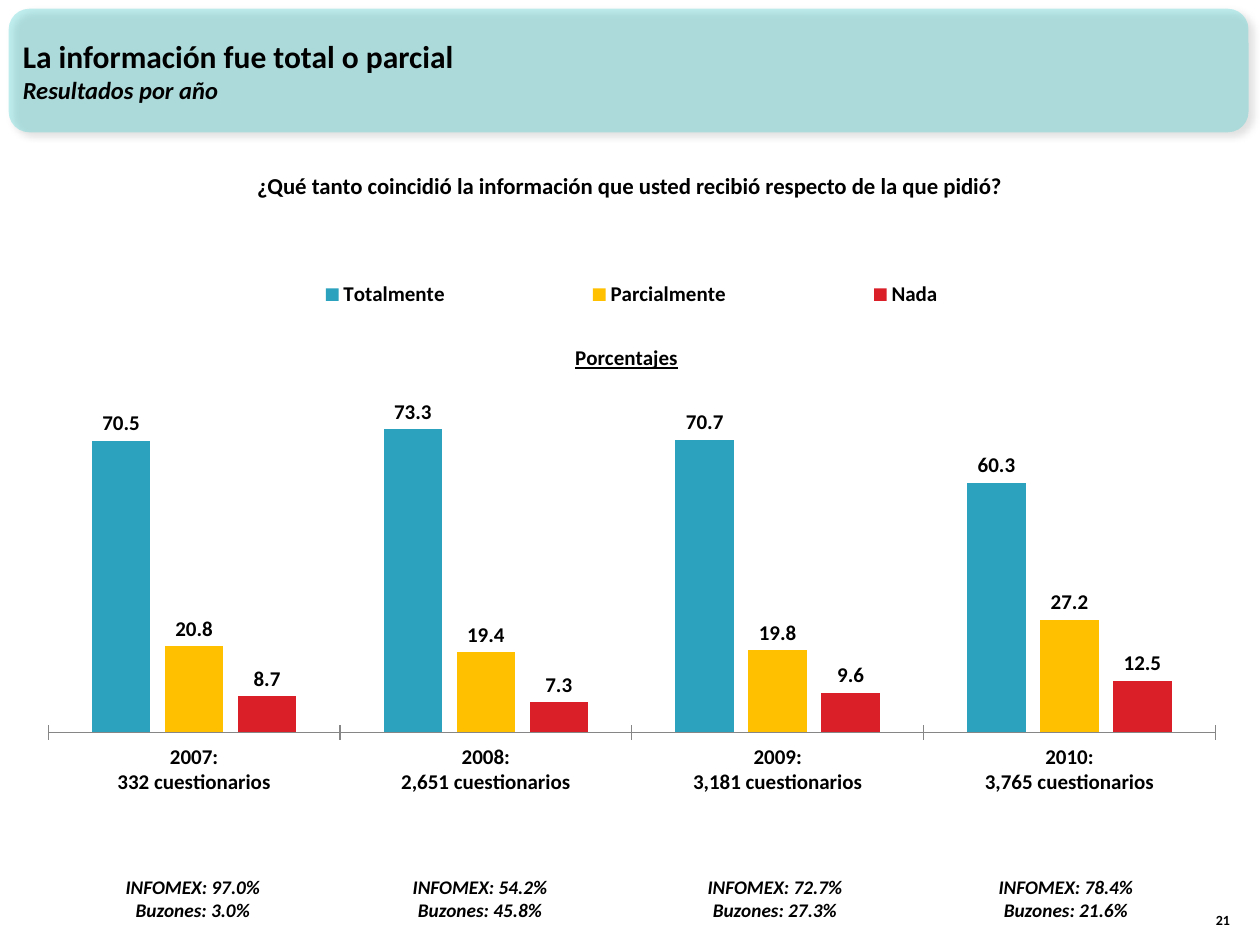
from dataclasses import dataclass
from typing import NamedTuple

from lxml.etree import SubElement
from pptx import Presentation
from pptx.chart.data import CategoryChartData
from pptx.dml.color import RGBColor
from pptx.enum.chart import (
    XL_CHART_TYPE, XL_LABEL_POSITION, XL_LEGEND_POSITION, XL_TICK_LABEL_POSITION, XL_TICK_MARK,
)
from pptx.enum.shapes import MSO_SHAPE
from pptx.enum.text import MSO_ANCHOR, MSO_AUTO_SIZE, PP_ALIGN
from pptx.oxml import parse_xml
from pptx.oxml.ns import nsdecls, qn
from pptx.util import Pt

BLACK = RGBColor(0x00, 0x00, 0x00)
TURQUOISE = RGBColor(0x33, 0xCC, 0xCC)
BLUE = RGBColor(0x2D, 0xA2, 0xBF)
YELLOW = RGBColor(0xFF, 0xC0, 0x00)
RED = RGBColor(0xDA, 0x1F, 0x28)
AXIS_GRAY = RGBColor(0x86, 0x86, 0x86)
FONT = "Calibri"


class Box(NamedTuple):
    left: float
    top: float
    width: float
    height: float

    def lengths(self) -> list:
        return [Pt(value) for value in self]


@dataclass
class Line:
    text: str
    size: float
    italic: bool = False


@dataclass
class Answer:
    name: str
    percentages: tuple
    color: RGBColor


@dataclass
class Year:
    year: int
    questionnaires: str
    infomex: str
    mailboxes: str
    note_left: float


ANSWERS = [
    Answer("Totalmente", (70.5, 73.3, 70.7, 60.3), BLUE),
    Answer("Parcialmente", (20.8, 19.4, 19.8, 27.2), YELLOW),
    Answer("Nada", (8.7, 7.3, 9.6, 12.5), RED),
]
YEARS = [
    Year(2007, "332", "97.0%", "3.0%", 53.3),
    Year(2008, "2,651", "54.2%", "45.8%", 217.4),
    Year(2009, "3,181", "72.7%", "27.3%", 385.9),
    Year(2010, "3,765", "78.4%", "21.6%", 552.2),
]


def format_font(font, size: float, italic: bool = False) -> None:
    font.name = FONT
    font.size = Pt(size)
    font.bold = True
    font.italic = italic
    font.color.rgb = BLACK


def write_lines(text_frame, lines: list[Line], alignment, anchor=MSO_ANCHOR.TOP) -> None:
    text_frame.word_wrap = True
    text_frame.auto_size = MSO_AUTO_SIZE.NONE
    text_frame.vertical_anchor = anchor
    for index, line in enumerate(lines):
        paragraph = text_frame.paragraphs[0] if index == 0 else text_frame.add_paragraph()
        paragraph.alignment = alignment
        run = paragraph.add_run()
        run.text = line.text
        format_font(run.font, line.size, line.italic)


def add_text(slide, box: Box, lines: list[Line], alignment=PP_ALIGN.CENTER,
             anchor=MSO_ANCHOR.TOP) -> None:
    shape = slide.shapes.add_textbox(*box.lengths())
    write_lines(shape.text_frame, lines, alignment, anchor)


def add_banner(slide) -> None:
    """Place the translucent, shadowed banner behind the title."""
    banner = slide.shapes.add_shape(MSO_SHAPE.ROUNDED_RECTANGLE, *Box(5, 5, 708.5, 70.6).lengths())
    banner.fill.solid()
    banner.fill.fore_color.rgb = TURQUOISE
    color = banner.element.spPr.find(f"{qn('a:solidFill')}/{qn('a:srgbClr')}")
    SubElement(color, qn("a:alpha"), val="30000")
    banner.line.fill.background()
    banner.element.spPr.append(parse_xml(
        f'<a:effectLst {nsdecls("a")}><a:outerShdw blurRad="50800" dist="38100" dir="2700000" '
        'algn="tl" rotWithShape="0"><a:srgbClr val="000000"><a:alpha val="40000"/></a:srgbClr>'
        '</a:outerShdw></a:effectLst>'))
    slide.shapes.title.element.addprevious(banner.element)


def set_layout(parent, previous_tag: str, target: str = "", **fractions: float) -> None:
    """Position a chart part by fractions of the chart area."""
    for old in parent.findall(qn("c:layout")):
        parent.remove(old)
    inner = f'<c:layoutTarget val="{target}"/>' if target else ""
    modes = "".join(f'<c:{key}Mode val="edge"/>' for key in fractions if key in "xy")
    values = "".join(f'<c:{key} val="{value}"/>' for key, value in fractions.items())
    layout = parse_xml(f'<c:layout {nsdecls("c")}><c:manualLayout>{inner}{modes}{values}'
                       '</c:manualLayout></c:layout>')
    previous = parent.find(qn(previous_tag)) if previous_tag else None
    if previous is None:
        parent.insert(0, layout)
    else:
        previous.addnext(layout)


def add_answer_chart(slide) -> None:
    data = CategoryChartData(number_format="0.0")
    data.categories = [f"{year.year}:\n{year.questionnaires} cuestionarios" for year in YEARS]
    for answer in ANSWERS:
        data.add_series(answer.name, answer.percentages)
    box = Box(15.8, 149, 690.5, 323.3)
    chart = slide.shapes.add_chart(XL_CHART_TYPE.COLUMN_CLUSTERED, *box.lengths(), data).chart
    format_font(chart.font, 12)

    chart.has_title = True
    run = chart.chart_title.text_frame.paragraphs[0].add_run()
    run.text = "Porcentajes"
    format_font(run.font, 12)
    run.font.underline = True
    chart.chart_title.include_in_layout = False

    chart.has_legend = True
    chart.legend.position = XL_LEGEND_POSITION.TOP
    chart.legend.include_in_layout = False
    format_font(chart.legend.font, 12)

    category_axis = chart.category_axis
    category_axis.major_tick_mark = XL_TICK_MARK.CROSS
    category_axis.tick_label_position = XL_TICK_LABEL_POSITION.LOW
    category_axis.format.line.color.rgb = AXIS_GRAY
    value_axis = chart.value_axis
    value_axis.minimum_scale, value_axis.maximum_scale, value_axis.major_unit = 0, 80, 20
    value_axis.has_major_gridlines = False
    value_axis.visible = False

    plot = chart.plots[0]
    plot.gap_width, plot.overlap, plot.vary_by_categories = 150, -25, False
    for series, answer in zip(plot.series, ANSWERS):
        series.format.fill.solid()
        series.format.fill.fore_color.rgb = answer.color
        labels = series.data_labels
        labels.show_value = True
        labels.number_format, labels.number_format_is_linked = "0.0", False
        labels.position = XL_LABEL_POSITION.OUTSIDE_END
        format_font(labels.font, 12)

    chart_element = chart.element.find(qn("c:chart"))
    set_layout(chart_element.find(qn("c:title")), "c:tx", x=0.45, y=0.14)
    set_layout(chart_element.find(qn("c:legend")), "c:legendPos", x=0.13, y=0.02, w=0.74, h=0.08)
    set_layout(chart_element.find(qn("c:plotArea")), "", "inner", x=0.017, y=0.249, w=0.966, h=0.585)


def main() -> None:
    presentation = Presentation()
    presentation.slide_width, presentation.slide_height = Pt(720), Pt(540)
    slide = presentation.slides.add_slide(presentation.slide_layouts[5])
    title = slide.shapes.title
    title.left, title.top, title.width, title.height = Box(5.8, 6.5, 660, 67.7).lengths()
    write_lines(title.text_frame,
                [Line("La información fue total o parcial", 18), Line("Resultados por año", 14, True)],
                PP_ALIGN.LEFT, MSO_ANCHOR.MIDDLE)
    add_banner(slide)
    add_text(slide, Box(681, 504.7, 29, 29), [Line("21", 8)], PP_ALIGN.RIGHT, MSO_ANCHOR.BOTTOM)
    add_answer_chart(slide)
    question = "¿Qué tanto coincidió la información que usted recibió respecto de la que pidió?"
    add_text(slide, Box(64, 94.3, 591, 23), [Line(question, 13)])
    for year in YEARS:
        add_text(slide, Box(year.note_left, 496.8, 113.8, 33.8),
                 [Line(f"INFOMEX: {year.infomex}", 11, True), Line(f"Buzones: {year.mailboxes}", 11, True)])
    presentation.save("out.pptx")


if __name__ == "__main__":
    main()
